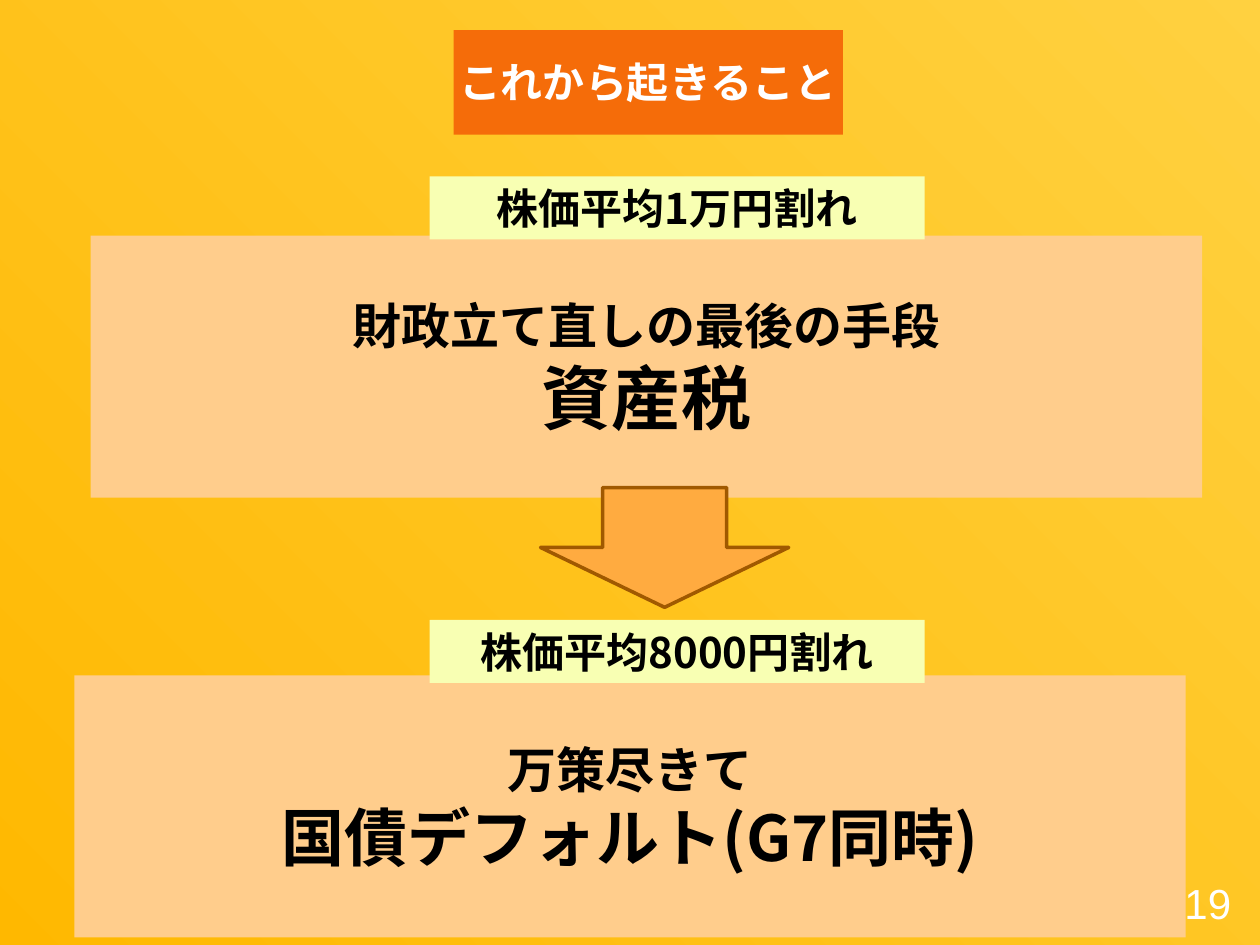
from lxml import etree
from pptx import Presentation
from pptx.dml.color import RGBColor
from pptx.enum.shapes import MSO_SHAPE
from pptx.enum.text import MSO_ANCHOR, PP_ALIGN
from pptx.oxml.ns import qn
from pptx.util import Inches, Pt

RECT, DOWN_ARROW = MSO_SHAPE.RECTANGLE, MSO_SHAPE.DOWN_ARROW
MIDDLE, CENTER, RIGHT = MSO_ANCHOR.MIDDLE, PP_ALIGN.CENTER, PP_ALIGN.RIGHT
JP = "Noto Sans CJK JP"
COLORS = {
    "light": "FFD140", "dark": "FFB800", "title": "F56C09", "panel": "FFCD8C",
    "label": "F8FFB3", "arrow": "FFAB40", "edge": "A05900",
    "white": "FFFFFF", "black": "000000",
}


def rgb(name):
    return RGBColor.from_string(COLORS[name])


def add_box(at, fill=None, lines=(), color="black", font=JP, bold=True,
            align=CENTER, shape=RECT):
    """Add a filled shape, or a text box without fill; lines are (text, size)."""
    at = [Inches(v) for v in at]
    if fill:
        sp = s.shapes.add_shape(shape, *at)
        sp.shadow.inherit = False
        sp.fill.solid()
        sp.fill.fore_color.rgb = rgb(fill)
        sp.line.fill.background()
    else:
        sp = s.shapes.add_textbox(*at)
    tf = sp.text_frame
    tf.word_wrap = True
    tf.vertical_anchor = MIDDLE
    for i, (text, size) in enumerate(lines):
        p = tf.add_paragraph() if i else tf.paragraphs[0]
        p.alignment = align
        r = p.add_run()
        r.text = text
        r.font.size = Pt(size)
        r.font.bold = bold
        r.font.name = font
        r.font.color.rgb = rgb(color)
        etree.SubElement(r._r.get_or_add_rPr(), qn("a:ea"), typeface=JP)
    return sp


prs = Presentation()
prs.slide_width, prs.slide_height = Inches(10), Inches(7.5)
s = prs.slides.add_slide(prs.slide_layouts[6])

# Gradient backdrop
backdrop = add_box((-0.05, -0.07, 10.1, 7.61), "light")
backdrop.fill.gradient()
backdrop.fill.gradient_angle = 225
for stop, name, pos in zip(backdrop.fill.gradient_stops, ("light", "dark"), (0, 1)):
    stop.color.rgb = rgb(name)
    stop.position = pos
backdrop.line.color.rgb = rgb("white")
backdrop.line.width = Pt(0.75)

# Slide number
add_box((9.27, 6.88, 0.6, 0.57), lines=[("19", 24)], color="white",
        font="Arial", bold=False, align=RIGHT)

# Title
add_box((3.6, 0.24, 3.09, 0.83), "title")
add_box((3.51, 0.3, 3.26, 0.7), lines=[("これから起きること", 24)],
        color="white", font="Arial")

# Two stages: a panel with a label over its top edge
stages = [
    (0.72, 1.87, 1.4, "株価平均1万円割れ",
     [("財政立て直しの最後の手段", 28), ("資産税", 40)]),
    (0.59, 5.36, 4.92, "株価平均8000円割れ",
     [("万策尽きて", 28), ("国債デフォルト(G7同時)", 36)]),
]
for left, top, label_top, label, lines in stages:
    add_box((left, top, 8.82, 2.08), "panel", lines)
    add_box((3.41, label_top, 3.93, 0.5), "label", [(label, 24)])

# Arrow from the first stage to the second
arrow = add_box((4.29, 3.87, 1.97, 0.95), "arrow", shape=DOWN_ARROW)
arrow.line.color.rgb = rgb("edge")
arrow.line.width = Pt(2)

prs.save("out.pptx")
